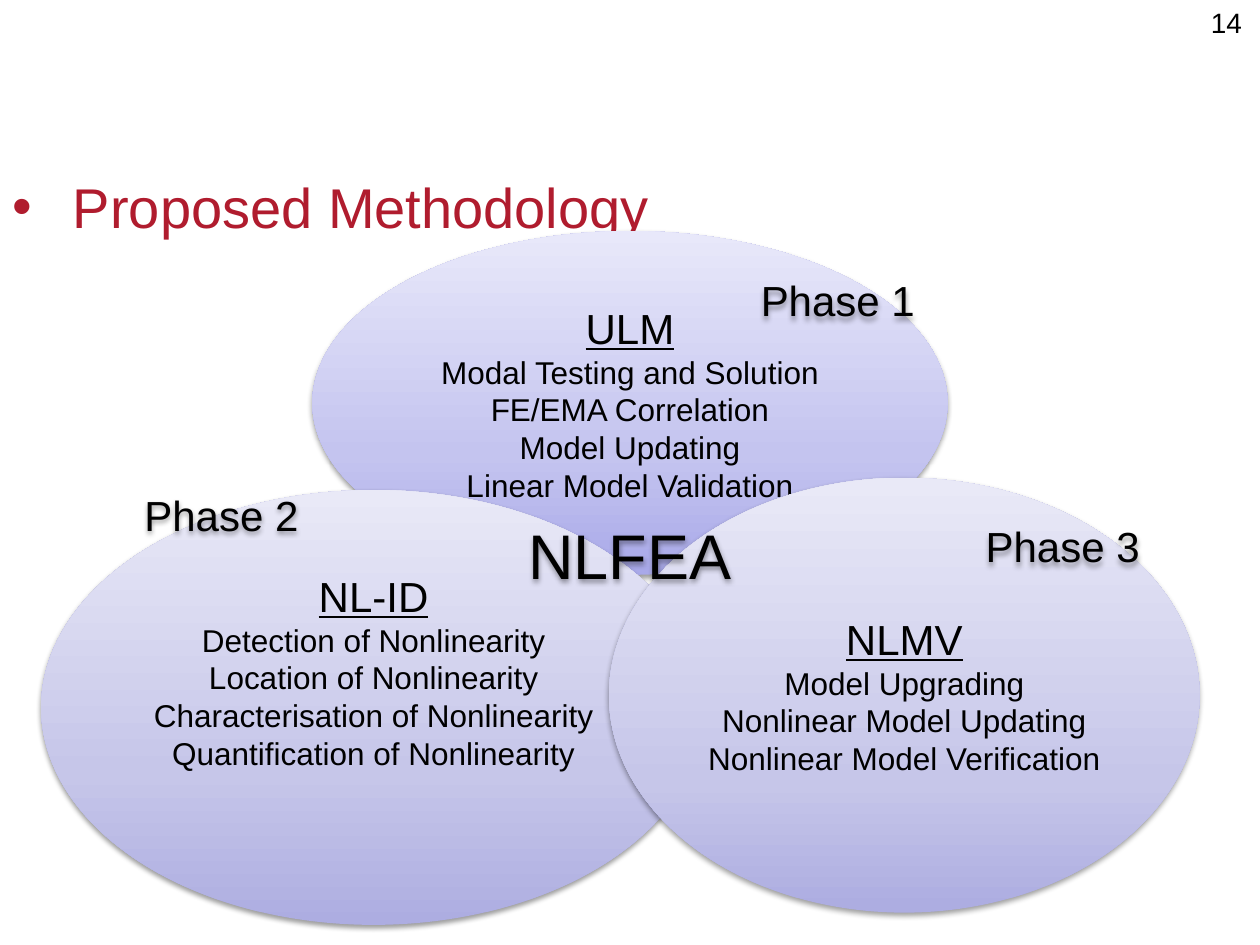
from copy import deepcopy
from lxml import etree
from pptx import Presentation
from pptx import util as u
from pptx.dml.color import RGBColor
from pptx.enum import shapes, text
from pptx.oxml.ns import qn

COLOURS = {
    "ink": "000000",
    "title": "B01C2E",
    "violet": ("A9A9E9", "C4C4EF", "E8E8FA"),
    "lavender": ("ADADE1", "C6C6E9", "E9E9F7"),
}
FONT = "Arial"


def write(para, words, size=18, colour="ink", underline=False, align=text.PP_ALIGN.CENTER):
    """Write one formatted run into a paragraph."""
    para.alignment = align
    span = para.add_run()
    span.text = words
    span.font.name = FONT
    span.font.size = u.Pt(size)
    span.font.underline = underline
    span.font.color.rgb = RGBColor.from_string(COLOURS[colour])


def cast_shadow(shape):
    """Give a shape a soft shadow straight below it."""
    shape.shadow.inherit = False
    effects = shape._element.spPr.find(qn("a:effectLst"))
    outer = etree.SubElement(
        effects, qn("a:outerShdw"), blurRad=str(u.Pt(3.1)), dist=str(u.Pt(1.6)),
        dir="5400000", rotWithShape="0")
    tone = etree.SubElement(outer, qn("a:srgbClr"), val=COLOURS["ink"])
    etree.SubElement(tone, qn("a:alpha"), val="38000")


def fill_gradient(shape, colours, positions):
    """Fill a shape with a three-stop gradient that rises from the bottom."""
    shape.fill.gradient()
    shape.fill.gradient_angle = 90
    stops = shape._element.spPr.find(".//" + qn("a:gsLst"))
    stops.append(deepcopy(stops[0]))
    for stop, colour, position in zip(shape.fill.gradient_stops, colours, positions):
        stop.color.rgb = RGBColor.from_string(colour)
        stop.position = position


def add_ellipse(page, box):
    """Add an ellipse without outline, with middle-anchored text."""
    oval = page.shapes.add_shape(shapes.MSO_SHAPE.OVAL, *map(u.Pt, box))
    oval.line.fill.background()
    cast_shadow(oval)
    frame = oval.text_frame
    frame.word_wrap = True
    frame.vertical_anchor = text.MSO_ANCHOR.MIDDLE
    frame.margin_left = frame.margin_right = 0
    return oval


def add_label(page, box, words, size=24, shadow=True):
    """Add a centred one-line text box."""
    label = page.shapes.add_textbox(*map(u.Pt, box))
    frame = label.text_frame
    frame.word_wrap = True
    frame.vertical_anchor = text.MSO_ANCHOR.MIDDLE
    write(frame.paragraphs[0], words, size=size)
    if shadow:
        cast_shadow(label)


def add_title(page, box, words):
    """Place the title placeholder as a bulleted heading."""
    title = page.shapes.title
    title.left, title.top, title.width, title.height = map(u.Pt, box)
    title.text_frame.vertical_anchor = text.MSO_ANCHOR.MIDDLE
    para = title.text_frame.paragraphs[0]
    props = para._p.get_or_add_pPr()
    props.set("marL", str(u.Pt(34.5)))
    props.set("indent", str(-u.Pt(34.5)))
    etree.SubElement(props, qn("a:buFont"), typeface=FONT)
    etree.SubElement(props, qn("a:buChar"), char="•")
    write(para, words, size=32, colour="title", align=text.PP_ALIGN.LEFT)


def add_phase(page, box, heading, steps, colours, label, label_box,
              positions=(0, 0.35, 1), lift=0):
    """Draw one phase ellipse with its steps and its label, offset from the box."""
    oval = add_ellipse(page, box)
    fill_gradient(oval, COLOURS[colours], positions)
    frame = oval.text_frame
    frame.margin_bottom = u.Pt(3.6 + lift)
    write(frame.paragraphs[0], heading, size=24, underline=True)
    for step in steps:
        write(frame.add_paragraph(), step)
    across, down, width, height = label_box
    add_label(page, (box[0] + across, box[1] + down, width, height), label)


def add_core(page, box, words):
    """Write the shared result where the phases meet."""
    oval = add_ellipse(page, box)
    oval.fill.background()
    write(oval.text_frame.paragraphs[0], words, size=36)


def main():
    """Build the methodology slide."""
    deck = Presentation()
    deck.slide_width, deck.slide_height = u.Pt(720), u.Pt(540)
    page = deck.slides.add_slide(deck.slide_layouts[5])
    add_title(page, (0, 90, 648, 55.5), "Proposed Methodology")
    add_label(page, (683.5, 0, 34.5, 26), "14", size=16, shadow=False)
    add_phase(page, (178.5, 132, 363, 196.5), "ULM",
              ("Modal Testing and Solution", "FE/EMA Correlation",
               "Model Updating", "Linear Model Validation"),
              "violet", "Phase 1", (209.5, 20, 181.5, 39))
    add_phase(page, (23.5, 280, 380, 248.5), "NL-ID",
              ("Detection of Nonlinearity", "Location of Nonlinearity",
               "Characterisation of Nonlinearity", "Quantification of Nonlinearity"),
              "lavender", "Phase 2", (26, -5.5, 154, 39), lift=41.5)
    add_phase(page, (348, 273, 337.5, 248.5), "NLMV",
              ("Model Upgrading", "Nonlinear Model Updating",
               "Nonlinear Model Verification"),
              "lavender", "Phase 3", (168.5, 19.5, 181.5, 39), positions=(0.01, 0.3, 1))
    add_core(page, (244, 261.5, 232, 111), "NLFEA")
    deck.save("out.pptx")


if __name__ == "__main__":
    main()
